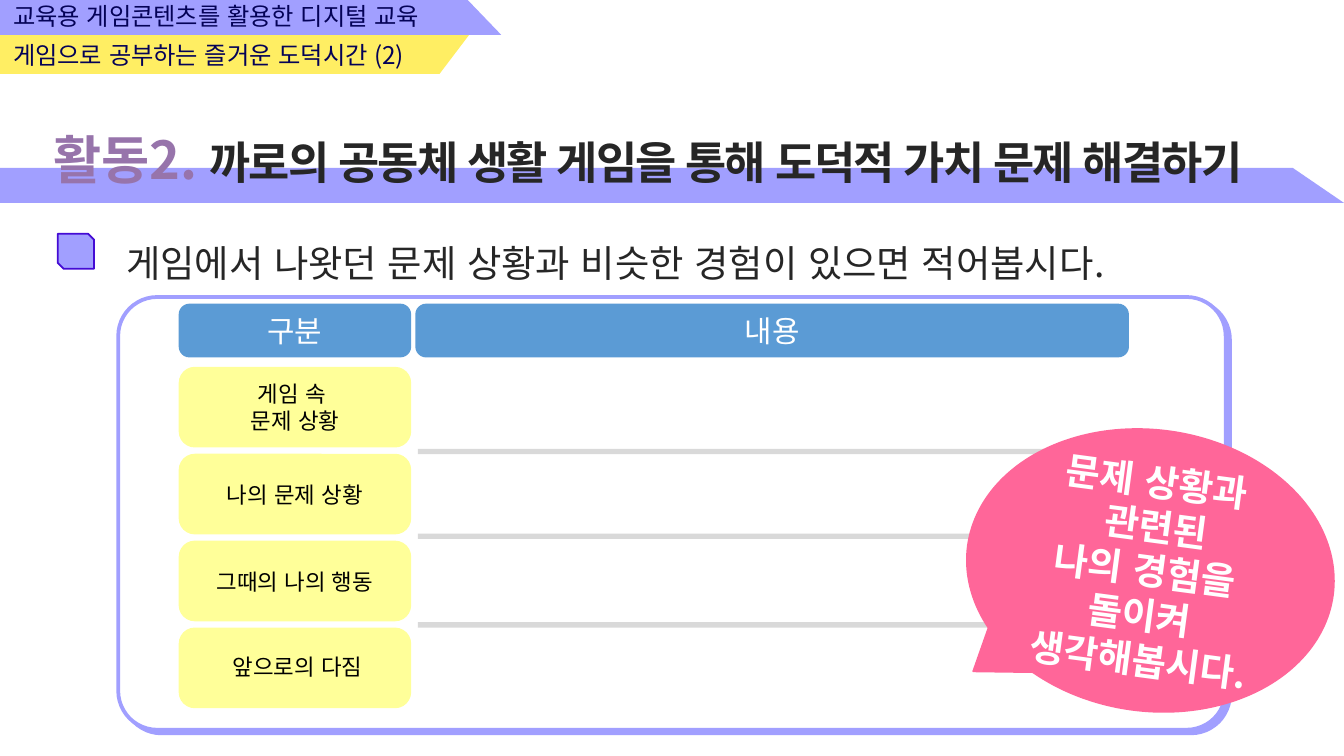
"""Build the moral-education activity slide with its reflection worksheet."""
from lxml import etree
from pptx import Presentation
from pptx.dml.color import RGBColor
from pptx.enum.lang import MSO_LANGUAGE_ID
from pptx.enum.shapes import MSO_SHAPE
from pptx.enum.text import MSO_ANCHOR, PP_ALIGN
from pptx.oxml.ns import qn
from pptx.util import Inches, Pt

ROUNDED = MSO_SHAPE.ROUNDED_RECTANGLE
SNIPPED = MSO_SHAPE.SNIP_2_DIAG_RECTANGLE
CALLOUT = MSO_SHAPE.OVAL_CALLOUT
TOP, MIDDLE = MSO_ANCHOR.TOP, MSO_ANCHOR.MIDDLE
LEFT, CENTER = PP_ALIGN.LEFT, PP_ALIGN.CENTER
KOREAN = MSO_LANGUAGE_ID.KOREAN

FONT = "Noto Sans CJK KR"
WHITE = RGBColor(0xFF, 0xFF, 0xFF)
BLACK = RGBColor(0x00, 0x00, 0x00)
LAVENDER = RGBColor(0xA1, 0x9F, 0xFF)
YELLOW = RGBColor(0xFF, 0xEE, 0x63)
NAVY = RGBColor(0x04, 0x02, 0x57)
MAUVE = RGBColor(0x97, 0x74, 0xAB)
CHARCOAL = RGBColor(0x26, 0x26, 0x26)
VIOLET = RGBColor(0x44, 0x0B, 0xD4)
BLUE = RGBColor(0x5B, 0x9B, 0xD5)
CREAM = RGBColor(0xFF, 0xFF, 0x99)
GRAY = RGBColor(0xD9, 0xD9, 0xD9)
PINK = RGBColor(0xFF, 0x66, 0x99)


def write(frame, lines, anchor=MIDDLE, align=CENTER, spacing=None):
    """Fill a frame with lines, each a list of (text, size, color, bold) runs."""
    frame.word_wrap = True
    frame.vertical_anchor = anchor
    for number, runs in enumerate(lines):
        paragraph = frame.add_paragraph() if number else frame.paragraphs[0]
        paragraph.alignment = align
        if spacing:
            paragraph.line_spacing = spacing
        for text, size, color, bold in runs:
            run = paragraph.add_run()
            run.text = text
            run.font.size = Pt(size)
            run.font.bold = bold
            run.font.language_id = KOREAN
            run.font.color.rgb = color
            run.font.name = FONT
            etree.SubElement(run.font._element, qn("a:ea"), typeface=FONT)


def add_block(kind, box, fill, line=None, width=1, adjustments=()):
    """Add a filled preset shape, outlined only when a line colour is given."""
    block = slide.shapes.add_shape(kind, *map(Inches, box))
    block.shadow.inherit = False
    block.fill.solid()
    block.fill.fore_color.rgb = fill
    if line is None:
        block.line.fill.background()
    else:
        block.line.color.rgb = line
        block.line.width = Pt(width)
    for index, value in enumerate(adjustments):
        block.adjustments[index] = value
    return block


deck = Presentation()
deck.slide_width, deck.slide_height = Inches(10), Inches(10 * 9 / 16)
slide = deck.slides.add_slide(deck.slide_layouts[5])

bands = [
    ([(0, 0.26), (3.49, 0.26), (3.27, 0.55), (0, 0.55)], YELLOW),
    ([(0, 0), (3.48, 0), (3.73, 0.26), (0, 0.26)], LAVENDER),
    ([(0, 1.25), (9.62, 1.25), (10, 1.51), (0, 1.51)], LAVENDER),
]
for corners, color in bands:
    points = [(Inches(x), Inches(y)) for x, y in corners]
    outline = slide.shapes.build_freeform(*points[0])
    outline.add_line_segments(points[1:])
    band = outline.convert_to_shape()
    band.shadow.inherit = False
    band.fill.solid()
    band.fill.fore_color.rgb = color
    band.line.fill.background()

captions = [
    ((0, 0.25, 3.33, 0.32), "게임으로 공부하는 즐거운 도덕시간 (2)", 13, NAVY, TOP, None),
    ((0, -0.04, 3.49, 0.32), "교육용 게임콘텐츠를 활용한 디지털 교육", 13, NAVY, TOP, None),
    ((0.84, 1.65, 9.21, 0.51),
     "게임에서 나왓던 문제 상황과 비슷한 경험이 있으면 적어봅시다.", 20, CHARCOAL, MIDDLE, 1.3),
]
for box, text, size, color, anchor, spacing in captions:
    caption = slide.shapes.add_textbox(*map(Inches, box))
    write(caption.text_frame, [[(text, size, color, False)]], anchor, LEFT, spacing)

title = slide.shapes.title
title.left, title.top, title.width, title.height = map(Inches, (0.3, 0.9, 9.75, 0.98))
write(title.text_frame, [[
    ("활동2. ", 28, MAUVE, True),
    ("까로의 공동체 생활 게임을 통해 도덕적 가치 문제 해결하기", 24, CHARCOAL, True),
]], TOP, LEFT)
title.text_frame.paragraphs[0].runs[1].font._element.set("spc", "-100")
slide.shapes._spTree.append(title._element)

add_block(SNIPPED, (0.43, 1.74, 0.27, 0.26), LAVENDER, VIOLET)

worksheet = add_block(ROUNDED, (0.88, 2.21, 8.24, 3.22), WHITE, LAVENDER, 2, [0.09])
effects = worksheet._element.spPr.find(qn("a:effectLst"))
shadow = etree.SubElement(effects, qn("a:outerShdw"), blurRad="0", dist=str(Pt(3)),
                          dir=str(40 * 60000), algn="tl", rotWithShape="0")
etree.SubElement(shadow, qn("a:srgbClr"), val=str(LAVENDER))

for left, width, heading in [(1.33, 1.73, "구분"), (3.09, 5.31, "내용")]:
    header = add_block(ROUNDED, (left, 2.26, width, 0.4), BLUE, adjustments=[0.2])
    write(header.text_frame, [[(heading, 16, WHITE, False)]])

first_top, last_top, row_height = 2.73, 4.67, 0.6
categories = [["게임 속 ", "문제 상황"], ["나의 문제 상황"], [], []]
row_pitch = (last_top - first_top) / (len(categories) - 1)
for row, lines in enumerate(categories):
    top = first_top + row * row_pitch
    category = add_block(ROUNDED, (1.33, top, 1.73, row_height), CREAM, adjustments=[0.2])
    if lines:
        write(category.text_frame, [[(line, 12, BLACK, False)] for line in lines])

for top in (3.34, 3.97, 4.63):
    add_block(ROUNDED, (3.11, top, 5.3, 0.04), GRAY, adjustments=[0.03])

row_labels = [
    ((1.46, 4.14, 1.47, 0.34), "그때의 나의 행동"),
    ((1.43, 4.77, 1.57, 0.34), "앞으로의 다짐"),
]
for box, text in row_labels:
    label = slide.shapes.add_textbox(*map(Inches, box))
    write(label.text_frame, [[(text, 12, BLACK, False)]], spacing=1.2)

prompt = add_block(CALLOUT, (7.19, 3.2, 2.74, 2.09), PINK, PINK, 1, [-0.44, 0.44])
prompt.rotation = 7.7
prompt_lines = ["문제 상황과 ", " 관련된 ", "나의 경험을 ", "돌이켜 ", "생각해봅시다."]
write(prompt.text_frame, [[(line, 20, WHITE, True)] for line in prompt_lines])

deck.save("out.pptx")
